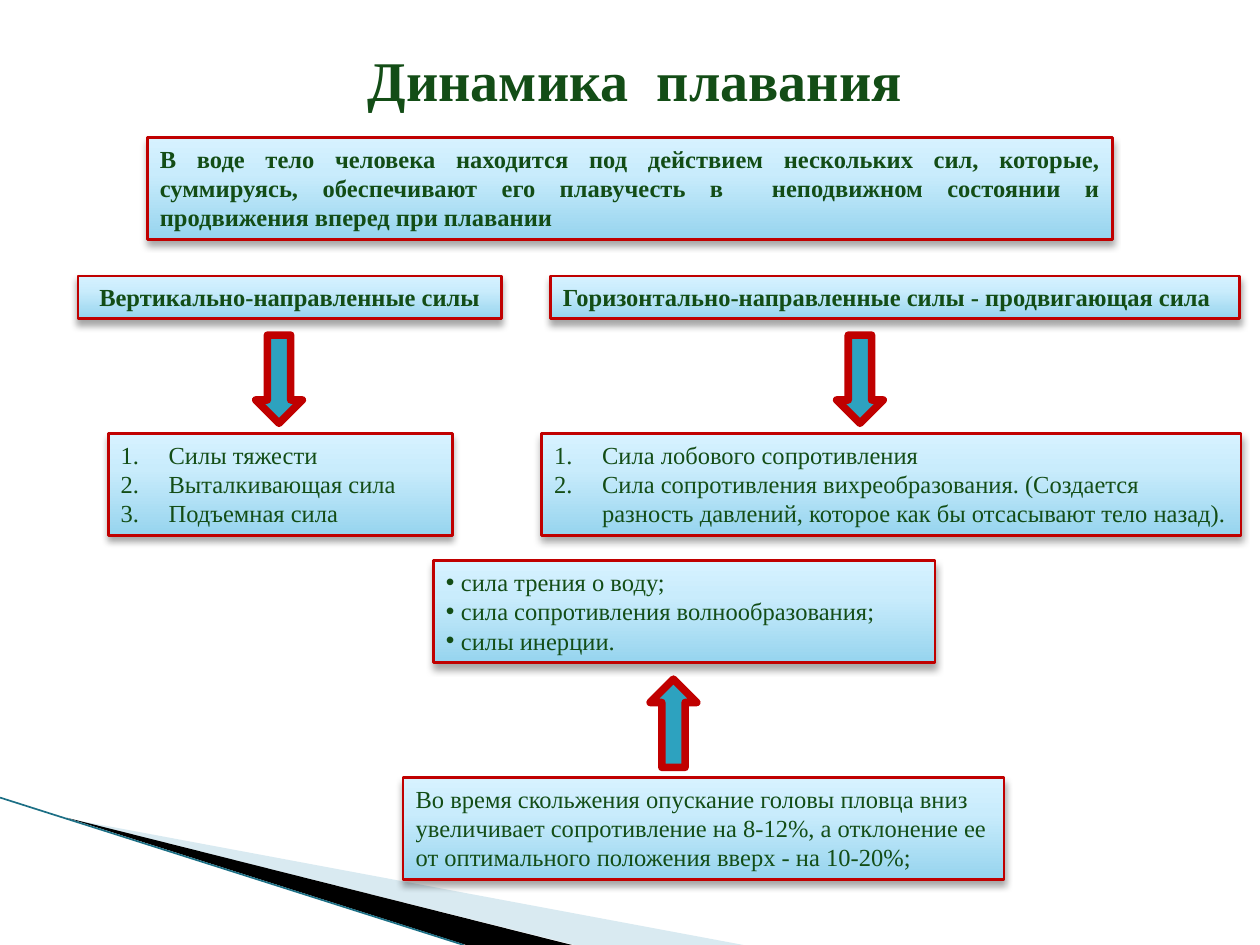
from dataclasses import dataclass

from lxml.etree import SubElement
from pptx import Presentation
from pptx.dml.color import RGBColor
from pptx.enum.shapes import MSO_CONNECTOR as Connector, MSO_SHAPE as Shape
from pptx.enum.text import MSO_ANCHOR as Anchor, MSO_AUTO_SIZE as AutoSize, PP_ALIGN as Align
from pptx.oxml.ns import qn
from pptx.util import Emu, Inches, Pt

COLUMNS, ROWS = 100, 75


@dataclass(frozen=True)
class Theme:
    font: str = "Times New Roman"
    title_size: int = 32
    body_size: int = 14
    text: str = "134D16"
    border: str = "C00000"
    arrow: str = "2DA2BF"
    gradient: tuple = ((0, "96D4EE"), (65, "C9ECFC"), (100, "D7F2FF"))
    shadow: str = "000000"
    pale_wedge: str = "D9EAF1"
    dark_wedge: str = "000000"
    edge: str = "1C6F85"
    border_width: float = 1.5
    arrow_border: float = 4.33


def add_xml(parent, tag, **attributes):
    return SubElement(parent, qn(tag), {key: str(value) for key, value in attributes.items()})


def set_list_marker(para, marker):
    """Number the paragraph for marker "1.", otherwise use marker as the bullet."""
    numbered = marker == "1."
    indent = Inches(0.38 if numbered else 0.12)
    props = para._p.get_or_add_pPr()
    props.set("marL", str(indent))
    props.set("indent", str(-indent))
    if numbered:
        add_xml(props, "a:buFont", typeface="+mj-lt")
        add_xml(props, "a:buAutoNum", type="arabicPeriod")
    else:
        add_xml(props, "a:buFont", typeface="Arial")
        add_xml(props, "a:buChar", char=marker)


class SlideBuilder:
    """Draws on one slide; places are (left, top, width, height) in grid units."""

    def __init__(self, deck, theme):
        self.theme = theme
        self.page = deck.slides.add_slide(deck.slide_layouts[5])
        self.column = deck.slide_width / COLUMNS
        self.row = deck.slide_height / ROWS

    def point(self, x, y):
        return Emu(round(x * self.column)), Emu(round(y * self.row))

    def place(self, left, top, width, height):
        return *self.point(left, top), *self.point(width, height)

    def add_text(self, frame, lines, size, bold, align, marker=None):
        frame.word_wrap = True
        frame.vertical_anchor = Anchor.TOP
        for index, line in enumerate(lines):
            para = frame.paragraphs[0] if index == 0 else frame.add_paragraph()
            para.alignment = align
            if marker:
                set_list_marker(para, marker)
            span = para.add_run()
            span.text = line
            span.font.name = self.theme.font
            span.font.size = Pt(size)
            span.font.bold = bold
            span.font.color.rgb = RGBColor.from_string(self.theme.text)

    def title(self, place, text):
        title = self.page.shapes.title
        title.left, title.top, title.width, title.height = self.place(*place)
        self.add_text(title.text_frame, [text], self.theme.title_size, True, Align.CENTER)
        title.text_frame.auto_size = AutoSize.NONE

    def outline(self, shape, width):
        shape.line.color.rgb = RGBColor.from_string(self.theme.border)
        shape.line.width = Pt(width)
        add_xml(shape._element.spPr.find(qn("a:ln")), "a:round")

    def box(self, place, lines, bold=False, align=Align.LEFT, marker=None):
        box = self.page.shapes.add_shape(Shape.RECTANGLE, *self.place(*place))
        box.fill.gradient()
        box.fill.gradient_angle = 90
        stops = box._element.spPr.find(".//" + qn("a:gsLst"))
        stops.clear()
        for share, colour in self.theme.gradient:
            add_xml(add_xml(stops, "a:gs", pos=share * 1000), "a:srgbClr", val=colour)
        self.outline(box, self.theme.border_width)
        self.drop_shadow(box)
        self.add_text(box.text_frame, lines, self.theme.body_size, bold, align, marker)
        box.text_frame.auto_size = AutoSize.SHAPE_TO_FIT_TEXT

    def drop_shadow(self, shape):
        shape.shadow.inherit = False
        effects = shape._element.spPr.find(qn("a:effectLst"))
        shadow = add_xml(effects, "a:outerShdw", blurRad=Pt(4), dist=Pt(3),
                         dir=90 * 60000, rotWithShape=0)
        colour = add_xml(shadow, "a:srgbClr", val=self.theme.shadow)
        add_xml(colour, "a:alpha", val=35000)

    def arrow(self, left, top, rotation=0):
        arrow = self.page.shapes.add_shape(Shape.DOWN_ARROW, *self.place(left, top, 3.7, 7))
        arrow.rotation = rotation
        arrow.shadow.inherit = False
        arrow.fill.solid()
        arrow.fill.fore_color.rgb = RGBColor.from_string(self.theme.arrow)
        self.outline(arrow, self.theme.arrow_border)

    def wedge(self, corners, colour):
        start, *others = [self.point(*corner) for corner in corners]
        builder = self.page.shapes.build_freeform(*start)
        builder.add_line_segments(others, close=True)
        wedge = builder.convert_to_shape()
        wedge.shadow.inherit = False
        wedge.fill.solid()
        wedge.fill.fore_color.rgb = RGBColor.from_string(colour)
        wedge.line.fill.background()

    def edge(self, start, end):
        edge = self.page.shapes.add_connector(
            Connector.STRAIGHT, *self.point(*start), *self.point(*end))
        edge.line.color.rgb = RGBColor.from_string(self.theme.edge)
        edge.line.width = Pt(0.95)
        add_xml(edge._element.spPr, "a:effectLst")


def main():
    deck = Presentation()
    deck.slide_width, deck.slide_height = Inches(10), Inches(7.5)
    theme = Theme()
    slide = SlideBuilder(deck, theme)

    slide.wedge([(5.5, 65), (59, 75), (45.6, 75)], theme.pale_wedge)
    slide.wedge([(5.3, 64.9), (45.4, 75), (37, 75)], theme.dark_wedge)
    slide.edge((0, 63.3), (36.8, 75))

    slide.title((7.8, 3.1, 85.2, 6.4), "Динамика  плавания")
    slide.box((11.7, 10.9, 76.6, 8.1), [
        "В воде тело человека находится под действием нескольких сил, которые, "
        "суммируясь, обеспечивают его плавучесть в  неподвижном состоянии и "
        "продвижения вперед при плавании"], bold=True, align=Align.JUSTIFY)

    heading_top, heading_height = 21.9, 3.4
    slide.box((6.2, heading_top, 33.6, heading_height),
              ["Вертикально-направленные силы"], bold=True, align=Align.CENTER)
    slide.box((43.7, heading_top, 54.7, heading_height),
              ["Горизонтально-направленные силы - продвигающая сила"],
              bold=True, align=Align.JUSTIFY)
    for left in (20.3, 66.4):
        slide.arrow(left, 26.6)

    list_top, list_height = 34.4, 8.1
    slide.box((8.6, list_top, 27.3, list_height),
              ["Силы тяжести", "Выталкивающая сила", "Подъемная сила"], marker="1.")
    slide.box((43, list_top, 55.5, list_height), [
        "Сила лобового сопротивления",
        "Сила сопротивления вихреобразования. (Создается разность давлений, "
        "которое как бы отсасывают тело назад)."], marker="1.")
    slide.box((34.4, 44.5, 39.8, list_height), [
        "сила трения о воду;", "сила сопротивления волнообразования;",
        "силы инерции."], marker="•")

    slide.arrow(51.6, 53.9, rotation=180)
    slide.box((32, 61.7, 47.7, 8.1), [
        "Во время скольжения опускание головы пловца вниз увеличивает "
        "сопротивление на 8-12%, а отклонение ее от оптимального положения "
        "вверх - на 10-20%;"])

    deck.save("out.pptx")


if __name__ == "__main__":
    main()
